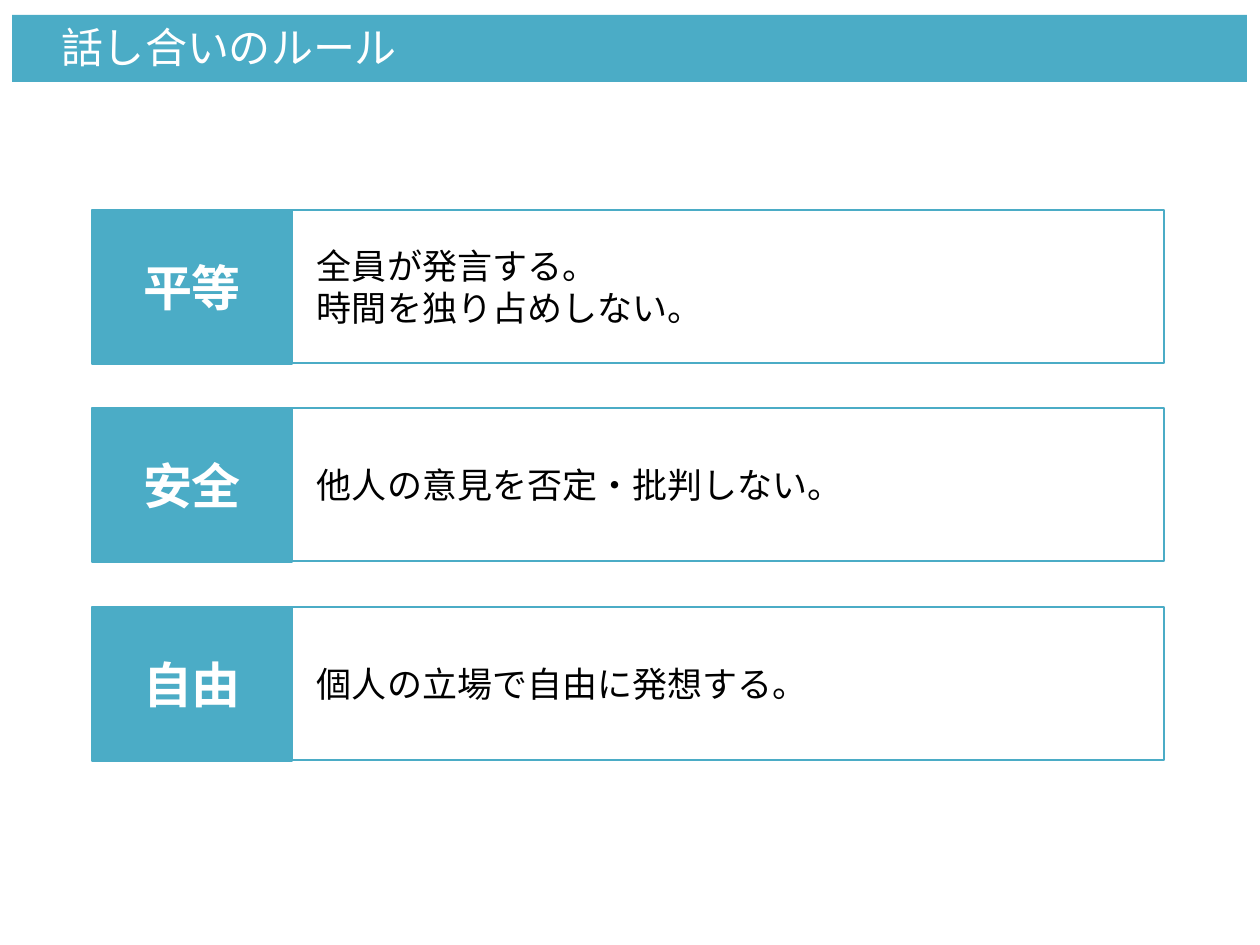
from pptx import Presentation
from pptx.dml.color import RGBColor
from pptx.enum.shapes import MSO_SHAPE
from pptx.enum.text import MSO_ANCHOR, MSO_AUTO_SIZE, PP_ALIGN
from pptx.util import Emu, Pt

RECTANGLE = MSO_SHAPE.RECTANGLE
MIDDLE = MSO_ANCHOR.MIDDLE
NO_AUTOFIT = MSO_AUTO_SIZE.NONE
LEFT, CENTER = PP_ALIGN.LEFT, PP_ALIGN.CENTER

TEAL = RGBColor(0x4B, 0xAC, 0xC6)
WHITE = RGBColor(0xFF, 0xFF, 0xFF)
BLACK = RGBColor(0x00, 0x00, 0x00)

PX_PER_INCH = 126
TITLE_ONLY = 5
RULES_TOP = 210
RULES_SPAN = 397
LABEL_LEFT, LABEL_WIDTH, LABEL_HEIGHT = 92, 200, 154
DETAIL_LEFT, DETAIL_WIDTH, DETAIL_HEIGHT = 292, 872, 153

RULES = [
    ("平等", "全員が発言する。\n時間を独り占めしない。"),
    ("安全", "他人の意見を否定・批判しない。"),
    ("自由", "個人の立場で自由に発想する。"),
]


def px(length):
    return Emu(round(length * 914400 / PX_PER_INCH))


def write_text(frame, text, font_name, size, color, align, bold=False):
    frame.text = text
    frame.vertical_anchor = MIDDLE
    for paragraph in frame.paragraphs:
        paragraph.alignment = align
        for run in paragraph.runs:
            run.font.name = font_name
            run.font.size = Pt(size)
            run.font.bold = bold
            run.font.color.rgb = color


def set_margins(frame, left, top, right, bottom):
    frame.margin_left, frame.margin_top = px(left), px(top)
    frame.margin_right, frame.margin_bottom = px(right), px(bottom)


def add_title(slide, text):
    title = slide.shapes.title
    title.left, title.top = px(12), px(15)
    title.width, title.height = px(1235), px(67)
    title.fill.solid()
    title.fill.fore_color.rgb = TEAL
    frame = title.text_frame
    frame.auto_size = NO_AUTOFIT
    set_margins(frame, 49, 6, 13, 10)
    write_text(frame, text, "Arial", 24, WHITE, LEFT)


def add_box(slide, left, top, width, height):
    box = slide.shapes.add_shape(RECTANGLE, px(left), px(top), px(width), px(height))
    box.shadow.inherit = False
    box.line.color.rgb = TEAL
    box.line.width = Pt(0.75)
    return box


def add_detail(slide, top, text):
    detail = add_box(slide, DETAIL_LEFT, top, DETAIL_WIDTH, DETAIL_HEIGHT)
    detail.fill.background()
    frame = detail.text_frame
    frame.word_wrap = True
    set_margins(frame, 25, 6, 13, 6)
    write_text(frame, text, "Calibri", 20, BLACK, LEFT)


def add_label(slide, top, text):
    label = add_box(slide, LABEL_LEFT, top, LABEL_WIDTH, LABEL_HEIGHT)
    label.fill.solid()
    label.fill.fore_color.rgb = TEAL
    label.text_frame.word_wrap = False
    write_text(label.text_frame, text, "Calibri", 28, WHITE, CENTER, bold=True)


def main():
    presentation = Presentation()
    presentation.slide_width = px(1260)
    presentation.slide_height = px(945)
    slide = presentation.slides.add_slide(presentation.slide_layouts[TITLE_ONLY])
    add_title(slide, "話し合いのルール")
    for index, (principle, detail) in enumerate(RULES):
        top = RULES_TOP + index * RULES_SPAN // (len(RULES) - 1)
        add_detail(slide, top, detail)
        add_label(slide, top, principle)
    presentation.save("out.pptx")


if __name__ == "__main__":
    main()
